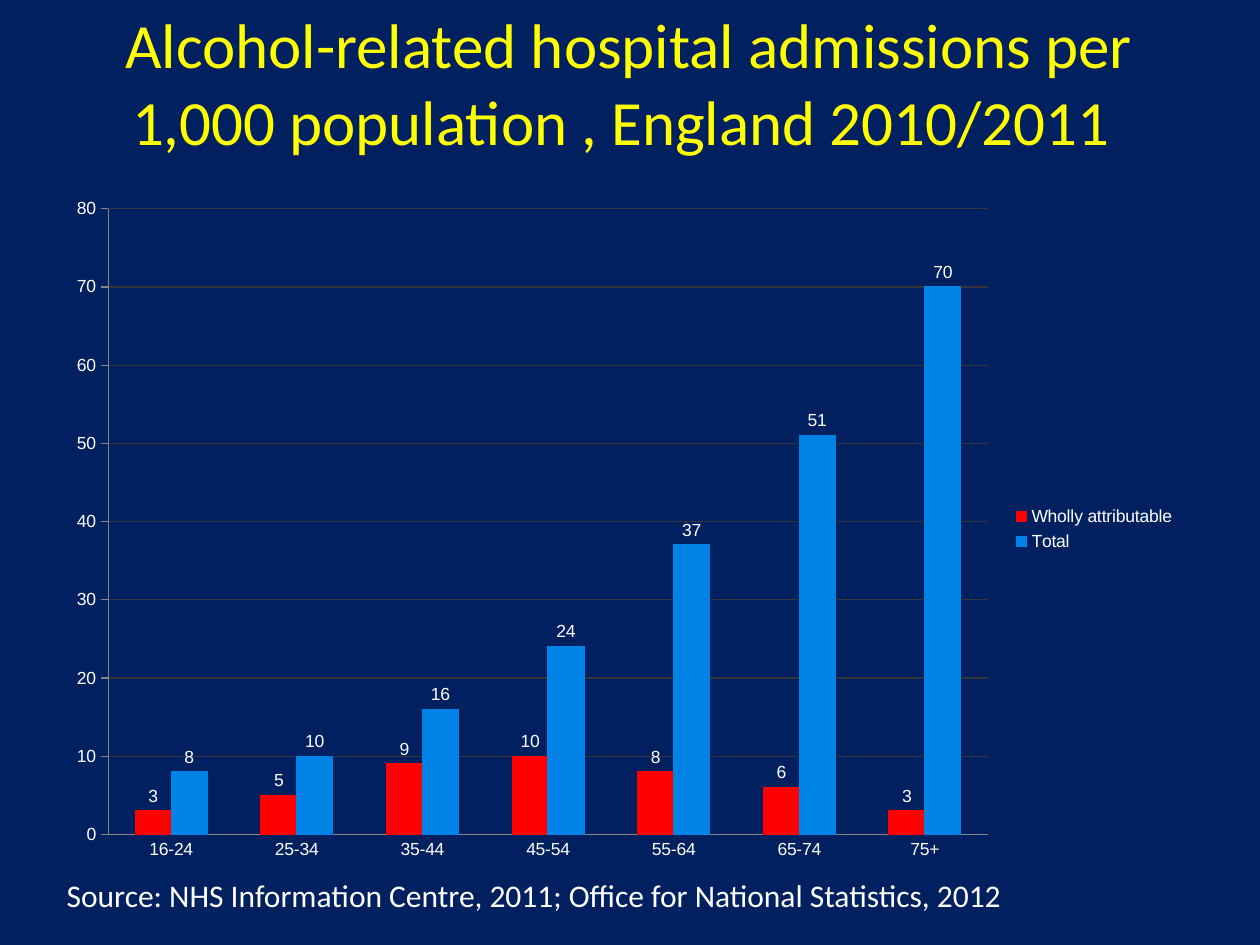
from pptx import Presentation
from pptx import util as u
from pptx.chart.data import CategoryChartData
from pptx.dml.color import RGBColor
from pptx.enum import chart as ch, text


def rgb(value):
    return RGBColor.from_string(value)


class Deck:
    WHITE, YELLOW, NAVY = "FFFFFF", "FFFF00", "002060"
    GRID, AXIS = "343439", "868686"
    TEXT_FONT, CHART_FONT = "Calibri", "Arial"

    def __init__(self, width, height):
        self.prs = Presentation()
        self.prs.slide_width, self.prs.slide_height = u.Pt(width), u.Pt(height)
        self.s = self.prs.slides.add_slide(self.prs.slide_layouts[5])
        self.s.background.fill.solid()
        self.s.background.fill.fore_color.rgb = rgb(self.NAVY)

    def set_all(self, obj, **values):
        for name, value in values.items():
            setattr(obj, name, value)

    def font(self, font, name, size, color):
        self.set_all(font, name=name, size=u.Pt(size))
        font.color.rgb = rgb(color)

    def line(self, line, color):
        line.color.rgb = rgb(color)
        line.width = u.Pt(0.75)

    def place(self, sp, x, y, w, h):
        self.set_all(sp, left=u.Pt(x), top=u.Pt(y), width=u.Pt(w), height=u.Pt(h))

    def run(self, p, words, size, color):
        r = p.add_run()
        r.text = words
        self.font(r.font, self.TEXT_FONT, size, color)

    def title(self, words, *box):
        sp = self.s.shapes.title
        self.place(sp, *box)
        tf = sp.text_frame
        self.set_all(tf, word_wrap=True, auto_size=text.MSO_AUTO_SIZE.NONE,
                     vertical_anchor=text.MSO_ANCHOR.MIDDLE)
        p = tf.paragraphs[0]
        p.alignment = text.PP_ALIGN.CENTER
        self.run(p, " ", 39.6, self.YELLOW)
        self.run(p, words, 36, self.YELLOW)

    def note(self, words, *box):
        sp = self.s.shapes.add_textbox(*map(u.Pt, box))
        self.set_all(sp.text_frame, word_wrap=False,
                     auto_size=text.MSO_AUTO_SIZE.SHAPE_TO_FIT_TEXT)
        self.run(sp.text_frame.paragraphs[0], words, 18, self.WHITE)

    def columns(self, cats, series, *box):
        data = CategoryChartData(number_format="0")
        data.categories = cats
        for name, _, values in series:
            data.add_series(name, values)
        chart = self.s.shapes.add_chart(
            ch.XL_CHART_TYPE.COLUMN_CLUSTERED, *map(u.Pt, box), data).chart
        self.font(chart.font, self.CHART_FONT, 10, self.WHITE)
        self.set_all(chart, has_title=False, has_legend=True)
        self.set_all(chart.legend, include_in_layout=False,
                     position=ch.XL_LEGEND_POSITION.RIGHT)

        # Axes
        ticks = ch.XL_TICK_MARK
        self.set_all(chart.category_axis, major_tick_mark=ticks.NONE)
        axis = chart.value_axis
        self.set_all(axis, minimum_scale=0, maximum_scale=80, major_unit=10,
                     major_tick_mark=ticks.OUTSIDE, has_major_gridlines=True)
        self.line(axis.major_gridlines.format.line, self.GRID)
        for ax in (chart.category_axis, axis):
            self.line(ax.format.line, self.AXIS)

        # Series and value labels
        plot = chart.plots[0]
        self.set_all(plot, gap_width=150, overlap=0, vary_by_categories=False)
        for ser, (_, color, _) in zip(plot.series, series):
            ser.invert_if_negative = False
            ser.format.fill.solid()
            ser.format.fill.fore_color.rgb = rgb(color)
            self.line(ser.format.line, color)
            self.set_all(ser.data_labels, show_value=True,
                         position=ch.XL_LABEL_POSITION.OUTSIDE_END)
            self.font(ser.data_labels.font, self.CHART_FONT, 10, self.WHITE)


def main():
    deck = Deck(720, 540)
    deck.title("Alcohol-related hospital admissions per 1,000 population , "
               "England 2010/2011", 25.2, 0, 659.5, 90)
    # Admissions by age group
    deck.columns(
        ["16-24", "25-34", "35-44", "45-54", "55-64", "65-74", "75+"],
        [("Wholly attributable", "FF0000", (3, 5, 9, 10, 8, 6, 3)),
         ("Total", "0083E6", (8, 10, 16, 24, 37, 51, 70))],
        31, 105.8, 648, 393.1)
    # Source line
    deck.note("Source: NHS Information Centre, 2011; "
              "Office for National Statistics, 2012", 31, 496.8, 567.4, 29)
    deck.prs.save("out.pptx")


if __name__ == "__main__":
    main()
